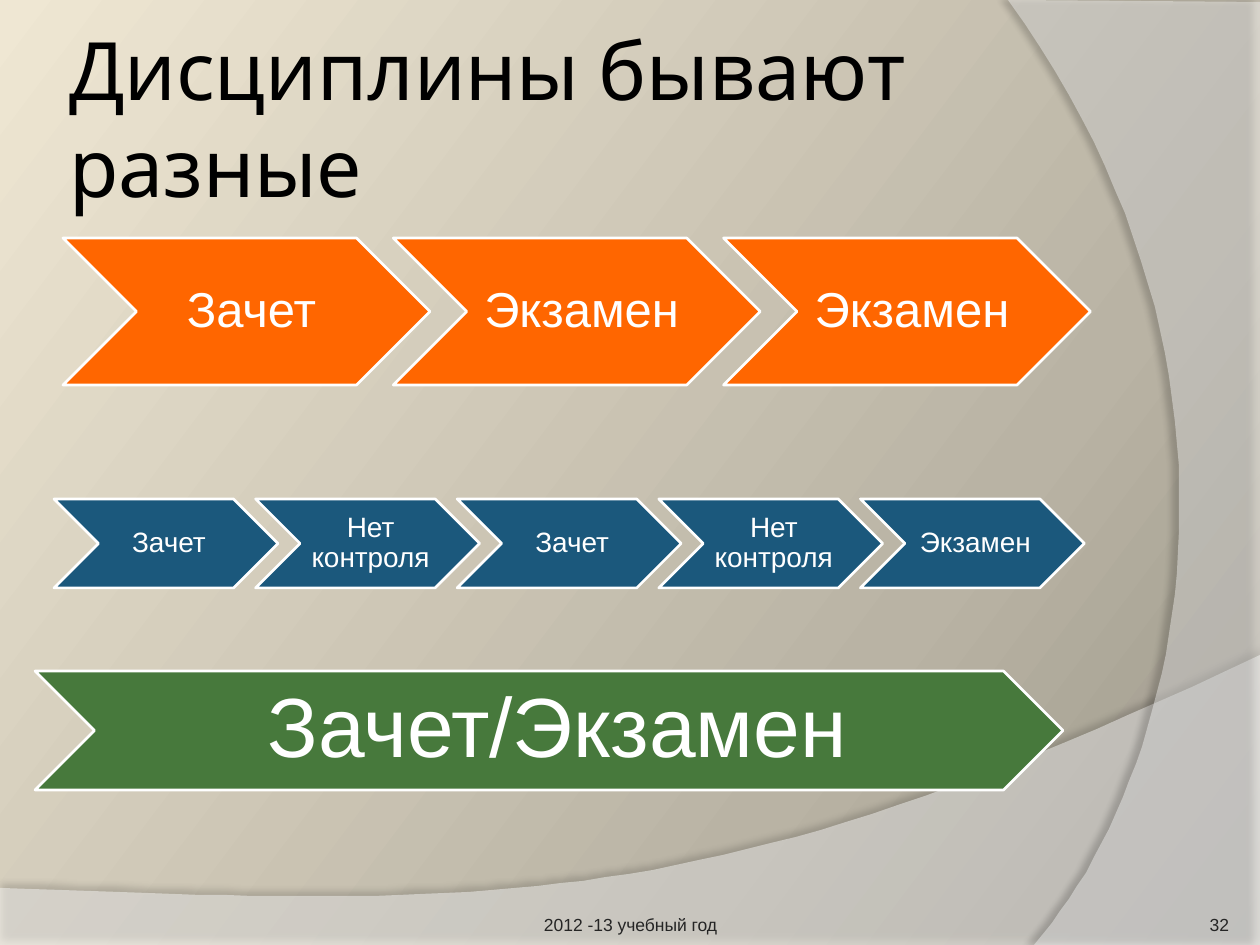
from lxml.etree import SubElement
from pptx import Presentation
from pptx.dml.color import RGBColor
from pptx.enum.shapes import MSO_SHAPE
from pptx.enum.text import MSO_ANCHOR, PP_ALIGN
from pptx.oxml.ns import qn
from pptx.util import Pt

EMU_PER_PX = 914400 / 126
WIDTH, HEIGHT = 1260, 945


def px(length):
    return round(length * EMU_PER_PX)


def color(hex_value):
    return RGBColor.from_string(hex_value)


def set_values(target, values):
    for name, value in values.items():
        setattr(target, name, value)


def add_xml(parent, tag, **attributes):
    return SubElement(parent, qn(tag), {name: str(value) for name, value in attributes.items()})


def bezier(start, control_1, control_2, end, steps=48):
    """Return the points of a cubic curve, both ends included."""
    points = []
    for step in range(steps + 1):
        t = step / steps
        weights = ((1 - t) ** 3, 3 * t * (1 - t) ** 2, 3 * t * t * (1 - t), t ** 3)
        corners = (start, control_1, control_2, end)
        points.append(tuple(sum(w * c[axis] for w, c in zip(weights, corners)) for axis in (0, 1)))
    return points


class SlideBuilder:
    font = "Arial"
    white = "FFFFFF"
    outline_width = Pt(1.5)
    overlap = 0.9  # distance between chevrons as a share of their width

    def __init__(self, slide):
        self.slide = slide

    def background(self, stops, angle):
        fill = self.slide.background.fill
        fill.gradient()
        fill.gradient_angle = angle
        stop_list = self.slide.element.find(".//" + qn("a:gsLst"))
        for stop in list(stop_list):
            stop_list.remove(stop)
        for percent, hex_value in stops:
            stop = add_xml(stop_list, "a:gs", pos=percent * 1000)
            add_xml(stop, "a:srgbClr", val=hex_value)

    def wave(self, points, opacity, shadow_opacity, distance, direction):
        """Draw a translucent white area with a soft shadow along its edge."""
        builder = self.slide.shapes.build_freeform(*points[0], scale=EMU_PER_PX)
        builder.add_line_segments(points[1:], close=True)
        shape = builder.convert_to_shape()
        shape.fill.solid()
        shape.fill.fore_color.rgb = color(self.white)
        shape.line.fill.background()
        add_xml(shape.element.find(".//" + qn("a:srgbClr")), "a:alpha", val=opacity * 1000)
        shape.shadow.inherit = False
        effects = shape.element.spPr.find(qn("a:effectLst"))
        shadow = add_xml(effects, "a:outerShdw", blurRad=Pt(4), dist=Pt(distance),
                         dir=direction * 60000, algn="ctr", rotWithShape=0)
        shadow_color = add_xml(shadow, "a:srgbClr", val="000000")
        add_xml(shadow_color, "a:alpha", val=shadow_opacity * 1000)

    def fill_text(self, shape, text, size, hex_value, insets, anchor=MSO_ANCHOR.MIDDLE,
                  font=font, **paragraph_format):
        left, top, right, bottom = map(px, insets)
        frame = shape.text_frame
        set_values(frame, {"word_wrap": True, "vertical_anchor": anchor, "margin_left": left,
                           "margin_top": top, "margin_right": right, "margin_bottom": bottom})
        paragraph = frame.paragraphs[0]
        set_values(paragraph, paragraph_format)
        run = paragraph.add_run()
        run.text = text
        set_values(run.font, {"size": Pt(size), "name": font})
        run.font.color.rgb = color(hex_value)

    def text(self, box, text, size, hex_value, insets, **text_format):
        shape = self.slide.shapes.add_textbox(*map(px, box))
        self.fill_text(shape, text, size, hex_value, insets, **text_format)

    def chevron_row(self, labels, box, fill, size, inset, left_inset):
        left, top, width, height = box
        for index, label in enumerate(labels):
            place = (left + index * width * self.overlap, top, width, height)
            shape = self.slide.shapes.add_shape(MSO_SHAPE.CHEVRON, *map(px, place))
            shape.shadow.inherit = False
            shape.fill.solid()
            shape.fill.fore_color.rgb = color(fill)
            shape.line.color.rgb = color(self.white)
            shape.line.width = self.outline_width
            self.fill_text(shape, label, size, self.white, (left_inset, inset, inset, inset),
                           alignment=PP_ALIGN.CENTER, line_spacing=0.9)


def main():
    presentation = Presentation()
    set_values(presentation, {"slide_width": px(WIDTH), "slide_height": px(HEIGHT)})
    builder = SlideBuilder(presentation.slides.add_slide(presentation.slide_layouts[6]))

    builder.background([(0, "9B9689"), (30, "B9B3A4"), (100, "EFE7D3")], angle=143)
    bottom_curve = bezier((WIDTH, 655), (704, 919), (493, 906), (0, 888))
    builder.wave([(0, HEIGHT), (WIDTH, HEIGHT), *bottom_curve],
                 opacity=45, shadow_opacity=35, distance=3.5, direction=270)
    right_curve = bezier((1034, HEIGHT), (1178, 780), (1283, 378), (1008, 0))
    builder.wave([(WIDTH, 2), (WIDTH, HEIGHT), *right_curve],
                 opacity=40, shadow_opacity=45, distance=4, direction=180)

    builder.text((63, 38, 1029, 158), "Дисциплины бывают разные", 46, "000000",
                 (6, 6, 6, 6), font="Karla")
    builder.text((431, 885, 399, 50), "2012 -13 учебный год", 10, "252525", (0, 6, 0, 0),
                 anchor=MSO_ANCHOR.BOTTOM, alignment=PP_ALIGN.CENTER)
    builder.text((1124, 885, 105, 50), "32", 10, "252525", (0, 0, 0, 0),
                 anchor=MSO_ANCHOR.BOTTOM, alignment=PP_ALIGN.RIGHT)

    builder.chevron_row(["Зачет", "Экзамен", "Экзамен"], (63, 238, 367, 147),
                        "FF6600", 28, inset=5, left_inset=15)
    builder.chevron_row(["Зачет", "Нет контроля", "Зачет", "Нет контроля", "Экзамен"],
                        (54, 499, 224, 89), "1B587C", 16, inset=3, left_inset=9)
    builder.chevron_row(["Зачет/Экзамен"], (35, 671, 1028, 119),
                        "47793C", 48, inset=9, left_inset=26)
    presentation.save("out.pptx")


if __name__ == "__main__":
    main()
